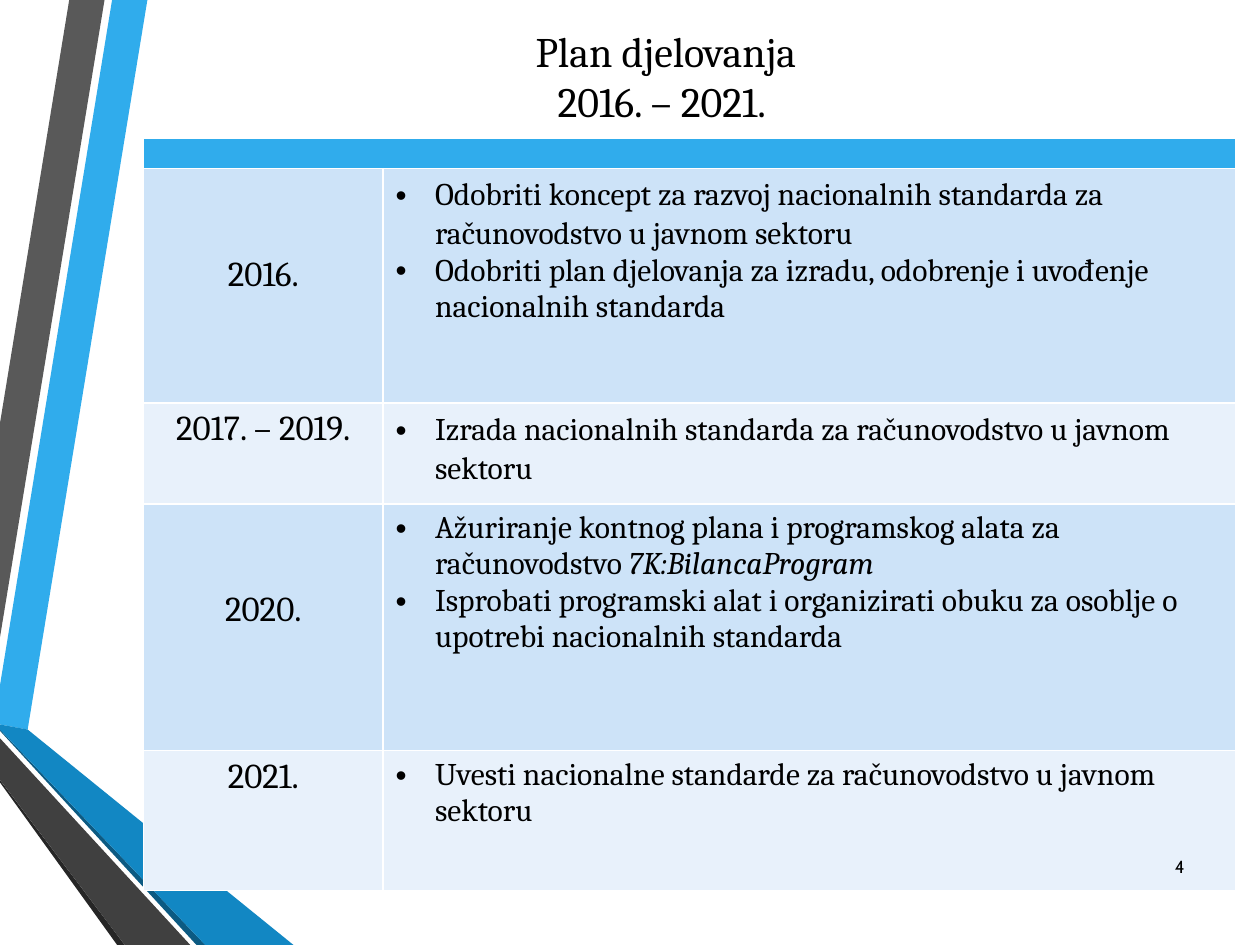
from lxml import etree
from pptx import Presentation
from pptx import util as u
from pptx.dml.color import RGBColor
from pptx.enum import text as t
from pptx.oxml import ns

Pt = u.Pt
BLACK = RGBColor(0x00, 0x00, 0x00)
SKY = RGBColor(0x30, 0xAC, 0xEC)
OCEAN = RGBColor(0x12, 0x87, 0xC3)
NAVY = RGBColor(0x0C, 0x5A, 0x82)
GREY = RGBColor(0x59, 0x59, 0x59)
CHARCOAL = RGBColor(0x40, 0x40, 0x40)
SOOT = RGBColor(0x26, 0x26, 0x26)
ROW_TINTS = (RGBColor(0xCD, 0xE3, 0xF8), RGBColor(0xE8, 0xF1, 0xFB))
SERIF, SANS = "Cambria", "Cabin"

RIBBONS = [
    (SKY, [(0, 544), (0, 575), (22, 579), (117, 0), (89, 0)]),
    (GREY, [(83, 0), (55, 0), (0, 336), (0, 506)]),
    (SOOT, [(0, 619), (0, 621), (93, 750), (99, 750)]),
    (NAVY, [(0, 579), (0, 580), (156, 750), (163, 750)]),
    (OCEAN, [(0, 579), (163, 750), (233, 750), (22, 579), (0, 575)]),
    (CHARCOAL, [(0, 619), (99, 750), (151, 750), (0, 586)]),
]
COLUMN_WIDTHS = (136.8, 487.2)
HEADER_HEIGHT = 17.2
PLAN = [
    ("2016.", 134, 49.3, 1.07, [
        [("Odobriti koncept za razvoj nacionalnih standarda za računovodstvo u javnom sektoru", False)],
        [("Odobriti plan djelovanja za izradu, odobrenje i uvođenje nacionalnih standarda", False)]]),
    ("2017. – 2019.", 57.6, 3.6, 1.07, [
        [("Izrada nacionalnih standarda za računovodstvo u javnom sektoru", False)]]),
    ("2020.", 141, 49.3, 1.0, [
        [("Ažuriranje kontnog plana i programskog alata za računovodstvo ", False),
         ("7K:BilancaProgram", True)],
        [("Isprobati programski alat i organizirati obuku za osoblje o upotrebi nacionalnih standarda", False)]]),
    ("2021.", 80, 3.6, 1.0, [
        [("Uvesti nacionalne standarde za računovodstvo u javnom sektoru", False)]]),
]


def apply(target, **values):
    """Set each given attribute on the target."""
    for key, value in values.items():
        setattr(target, key, value)


def style(font, size, name=SERIF, italic=False):
    """Give a font its black text format."""
    apply(font, size=Pt(size), name=name, italic=italic, bold=False)
    font.color.rgb = BLACK


def paint(part, color):
    """Fill a shape or cell with one colour."""
    part.fill.solid()
    part.fill.fore_color.rgb = color


def add_ribbons(slide, left, top):
    """Draw the folded ribbons, outlined in hundredths of an inch."""
    for color, corners in RIBBONS:
        outline = slide.shapes.build_freeform(*corners[0], scale=Pt(0.72))
        outline.add_line_segments(corners[1:], close=True)
        ribbon = outline.convert_to_shape(Pt(left), Pt(top))
        ribbon.shadow.inherit = False
        paint(ribbon, color)
        ribbon.line.fill.background()


def add_heading(slide, left, top, width, height):
    """Place and format the title."""
    heading = slide.shapes.title
    apply(heading, left=Pt(left), top=Pt(top), width=Pt(width), height=Pt(height))
    frame = heading.text_frame
    apply(frame, text="Plan djelovanja\v2016. – 2021. ", word_wrap=True,
          vertical_anchor=t.MSO_ANCHOR.MIDDLE)
    line = frame.paragraphs[0]
    line.alignment = t.PP_ALIGN.CENTER
    for run in line.runs:
        style(run.font, 24)


def add_bullet(paragraph, indent=22.5):
    """Give a paragraph a hanging bullet."""
    properties = paragraph._p.get_or_add_pPr()
    properties.set("marL", str(Pt(indent)))
    properties.set("indent", str(-Pt(indent)))
    etree.SubElement(properties, ns.qn("a:buFont")).set("typeface", "Arial")
    etree.SubElement(properties, ns.qn("a:buChar")).set("char", "•")


def fill_year(cell, year, margin):
    """Write the year of one plan row."""
    apply(cell, text=year, margin_top=Pt(margin))
    label = cell.text_frame.paragraphs[0]
    label.alignment = t.PP_ALIGN.CENTER
    style(label.runs[0].font, 20)


def fill_tasks(cell, tasks, first_spacing):
    """Write the bulleted tasks of one plan row."""
    frame = cell.text_frame
    for index, pieces in enumerate(tasks):
        task = frame.add_paragraph() if index else frame.paragraphs[0]
        task.line_spacing = 1.0 if index else first_spacing
        add_bullet(task)
        for words, italic in pieces:
            run = task.add_run()
            run.text = words
            style(run.font, 18, italic=italic)


def add_plan(slide, left, top):
    """Build the table of years and tasks."""
    heights = [HEADER_HEIGHT] + [entry[1] for entry in PLAN]
    plan = slide.shapes.add_table(len(heights), len(COLUMN_WIDTHS), Pt(left), Pt(top),
                                  Pt(sum(COLUMN_WIDTHS)), Pt(sum(heights))).table
    for column, width in zip(plan.columns, COLUMN_WIDTHS):
        column.width = Pt(width)
    for row, height in zip(plan.rows, heights):
        row.height = Pt(height)
    header = plan.cell(0, 0)
    header.merge(plan.cell(0, 1))
    for cell in plan.rows[0].cells:
        apply(cell, margin_top=0, margin_bottom=0)
        cell.text_frame.paragraphs[0].font.size = Pt(10)
        paint(cell, SKY)
    for index, (year, _, margin, spacing, tasks) in enumerate(PLAN):
        year_cell, task_cell = plan.rows[index + 1].cells
        fill_year(year_cell, year, margin)
        fill_tasks(task_cell, tasks, spacing)
        for cell in (year_cell, task_cell):
            paint(cell, ROW_TINTS[index % 2])


def add_page_number(slide, left, top, width, height):
    """Place the page number."""
    frame = slide.shapes.add_textbox(Pt(left), Pt(top), Pt(width), Pt(height)).text_frame
    apply(frame, text="4", word_wrap=True, vertical_anchor=t.MSO_ANCHOR.MIDDLE)
    number = frame.paragraphs[0]
    number.alignment = t.PP_ALIGN.RIGHT
    style(number.runs[0].font, 10, SANS)


def main():
    """Build and save the slide."""
    deck = Presentation()
    apply(deck, slide_width=Pt(720), slide_height=Pt(540))
    slide = deck.slides.add_slide(deck.slide_layouts[5])
    add_ribbons(slide, 0, 0)
    add_heading(slide, 77, 9.4, 607, 67.7)
    add_plan(slide, 82.1, 79.2)
    add_page_number(slide, 650.2, 481, 33.8, 28.8)
    deck.save("out.pptx")


if __name__ == "__main__":
    main()
